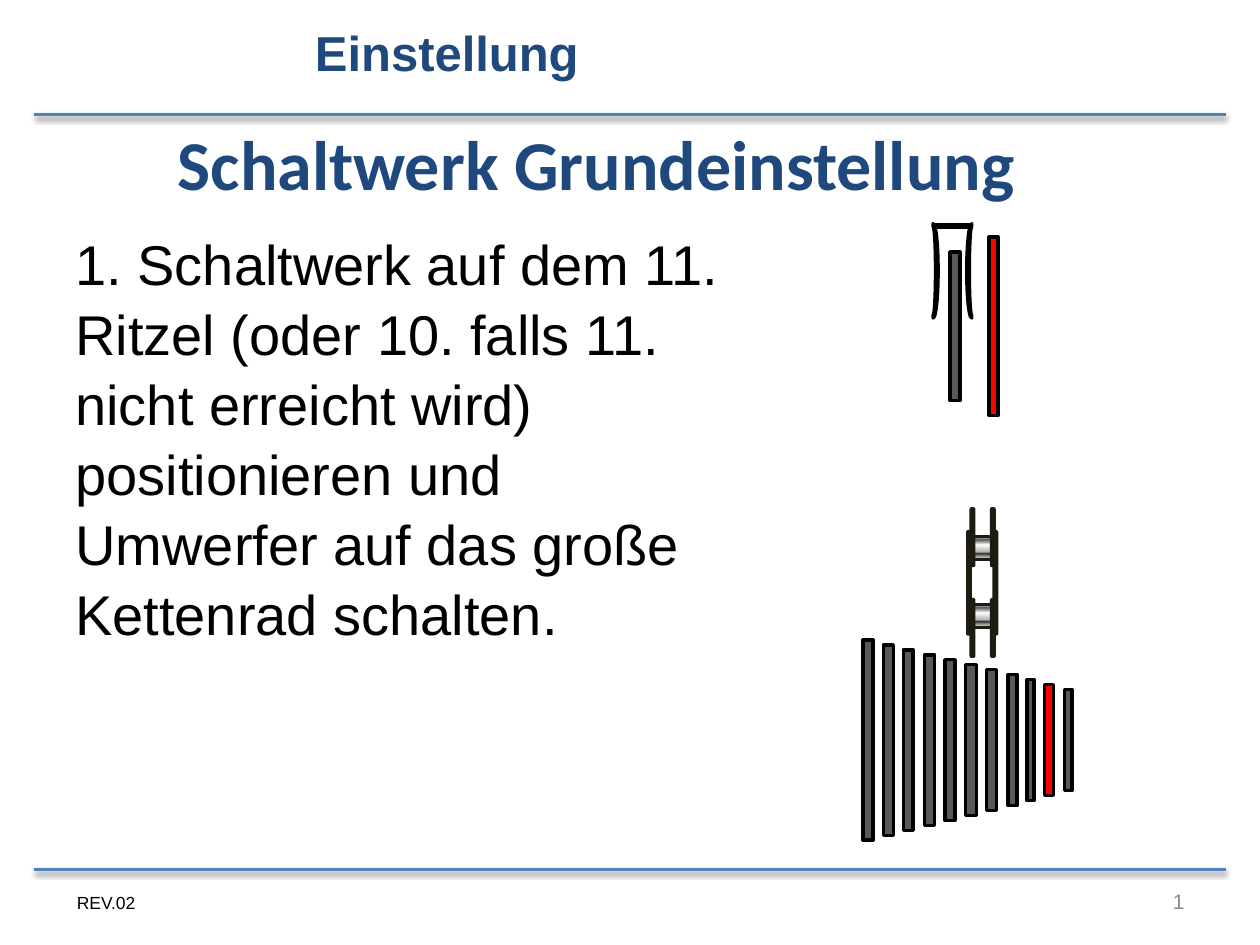
from lxml import etree
from pptx import Presentation
from pptx.dml.color import RGBColor
from pptx.enum import shapes, text
from pptx.oxml import parse_xml
from pptx.oxml.ns import nsdecls, qn
from pptx.util import Cm, Pt

# Content
TITLE = "Schaltwerk Grundeinstellung"
SECTION = "Einstellung"
BODY = ("1. Schaltwerk auf dem 11. Ritzel (oder 10. falls 11. nicht erreicht wird) "
        "positionieren und Umwerfer auf das große Kettenrad schalten.")
REVISION = "REV.02"

NAVY, BLUE, BLACK, GREY, RED = "1F497D", "4F81BD", "000000", "595959", "FF0000"
CHAIN = "1E1C11"

# Cassette: left edge and width of each sprocket, largest first (cm)
SPROCKETS = [(17.4, .2), (17.81, .2), (18.21, .2), (18.64, .2), (19.05, .2), (19.46, .23),
             (19.89, .2), (20.32, .18), (20.7, .15), (21.06, .18), (21.46, .15)]
ACTIVE = 9
CASSETTE_MIDDLE, LARGEST, SHRINK = 14.92, 4.04, .2

# Chainrings: left, top, width, height, colour (cm)
CHAINRINGS = [(19.15, 5.08, .2, 3, GREY), (19.94, 4.78, .18, 3.6, RED)]

# Chain: plate lefts, and tops of links (cm)
OUTER_LEFTS, INNER_LEFTS = (19.51, 20.04), (19.58, 19.99)
INNER_TOPS, ROLLER_TOPS = (10.26, 12.09), (10.82, 12.19)
PLATE_STOPS = [(0, "808080"), (13, "5F5F5F"), (21, "5F5F5F"), (63, "FFFFFF"),
               (67, "B2B2B2"), (69, "292929"), (82, "777777"), (100, "EAEAEA")]
ROLLER_STOPS = [(0, "CBCBCB"), (13, "5F5F5F"), (15, "5F5F5F"), (36, "FFFFFF"),
                (67, "B2B2B2"), (75, "292929"), (82, "777777"), (100, "EAEAEA")]
PLATE_SHADE = '<a:path path="rect"><a:fillToRect l="100000" t="100000"/></a:path>'
ROLLER_SHADE = '<a:lin ang="5400000" scaled="0"/>'

# Derailleur cage: left and rotation of each side (cm, degrees)
CAGE_SIDES = [(17.86, 90), (18.64, 270)]


def rgb(color):
    return RGBColor.from_string(color)


def add_line(x1, x2, y, color, width, shadow=False):
    c = s.shapes.add_connector(shapes.MSO_CONNECTOR.STRAIGHT, Cm(x1), Cm(y), Cm(x2), Cm(y))
    c.line.color.rgb = rgb(color)
    c.line.width = Pt(width)
    effects = etree.SubElement(c._element.spPr, qn("a:effectLst"))
    if shadow:
        effects.append(parse_xml(
            f'<a:outerShdw {nsdecls("a")} blurRad="39370" dist="20320" dir="5400000" '
            'rotWithShape="0"><a:srgbClr val="000000"><a:alpha val="38000"/></a:srgbClr>'
            '</a:outerShdw>'))


def add_bar(kind, left, top, width, height, fill, line=BLACK):
    sp = s.shapes.add_shape(kind, Cm(left), Cm(top), Cm(width), Cm(height))
    sp.shadow.inherit = False
    sp.fill.solid()
    sp.fill.fore_color.rgb = rgb(fill)
    sp.line.color.rgb = rgb(line)
    sp.line.width = Pt(2)
    return sp


def shade(sp, stops, direction):
    marks = "".join(f'<a:gs pos="{pos * 1000}"><a:srgbClr val="{color}"/></a:gs>'
                    for pos, color in stops)
    solid = sp._element.spPr.find(qn("a:solidFill"))
    solid.getparent().replace(solid, parse_xml(
        f'<a:gradFill {nsdecls("a")}><a:gsLst>{marks}</a:gsLst>{direction}</a:gradFill>'))


def write(sp, box, words, size, color, font="Arial", bold=False, wrap=False,
          align=text.PP_ALIGN.LEFT, anchor=text.MSO_ANCHOR.TOP):
    sp.left, sp.top, sp.width, sp.height = map(Cm, box)
    tf = sp.text_frame
    tf.word_wrap = wrap
    tf.auto_size = text.MSO_AUTO_SIZE.NONE
    tf.vertical_anchor = anchor
    p = tf.paragraphs[0]
    p.alignment = align
    r = p.add_run()
    r.text = words
    r.font.name, r.font.size, r.font.bold = font, Pt(size), bold
    r.font.color.rgb = rgb(color)
    return p


def add_text(box, *args, **style):
    return write(s.shapes.add_textbox(0, 0, 0, 0), box, *args, **style)


prs = Presentation()
prs.slide_width, prs.slide_height = Cm(25.4), Cm(19.05)
s = prs.slides.add_slide(prs.slide_layouts[5])

# Header and footer rules
for y in (2.31, 17.53):
    add_line(.69, 24.71, y, BLUE, 2, shadow=True)

# Texts
write(s.shapes.title, (3.33, 2.31, 18.39, 1.96), TITLE, 40, NAVY, font="Calibri", bold=True)
add_text((6.1, .33, 5.89, 1.45), SECTION, 28, NAVY, bold=True)
p = add_text((1.27, 4.45, 13.82, 11.89), BODY, 32, BLACK, wrap=True)
p.line_spacing = 1.04
add_text((1.3, 17.86, 1.73, .69), REVISION, 10, BLACK)

# Slide number as a live field
p = add_text((18.21, 17.65, 5.92, 1.02), "17", 12, "8C8C8C", wrap=True,
             align=text.PP_ALIGN.RIGHT, anchor=text.MSO_ANCHOR.MIDDLE)
run = p.runs[0]._r
field = parse_xml(f'<a:fld {nsdecls("a")} id="{{B6F15528-21DE-4FAA-801E-634DDDAF4B2B}}" '
                  'type="slidenum"/>')
run.getparent().replace(run, field)
field.extend(list(run))

# Cassette
RECT, ROUND = shapes.MSO_SHAPE.RECTANGLE, shapes.MSO_SHAPE.ROUNDED_RECTANGLE
for i, (left, width) in enumerate(SPROCKETS):
    height = LARGEST - SHRINK * i
    add_bar(RECT, left, CASSETTE_MIDDLE - height / 2, width, height,
            RED if i == ACTIVE else GREY)

# Chain: outer plates, rollers, inner plates
plates = [(left, 10.72, 2.06) for left in OUTER_LEFTS]
inner = [(left, top, 1.14) for top in INNER_TOPS for left in INNER_LEFTS]
for left, top, height in plates:
    shade(add_bar(ROUND, left, top, .05, height, CHAIN, CHAIN), PLATE_STOPS, PLATE_SHADE)
for top in ROLLER_TOPS:
    shade(add_bar(RECT, 19.61, top, .38, .46, CHAIN, CHAIN), ROLLER_STOPS, ROLLER_SHADE)
for left, top, height in inner:
    shade(add_bar(ROUND, left, top, .05, height, CHAIN, CHAIN), PLATE_STOPS, PLATE_SHADE)

# Chainrings and derailleur cage
for *box, color in CHAINRINGS:
    add_bar(RECT, *box, color)
for left, angle in CAGE_SIDES:
    add_bar(shapes.MSO_SHAPE.BLOCK_ARC, left, 5.36, 1.9, .2, "404040").rotation = angle
add_line(18.8, 19.61, 4.55, BLACK, 3.5)

prs.save("out.pptx")
